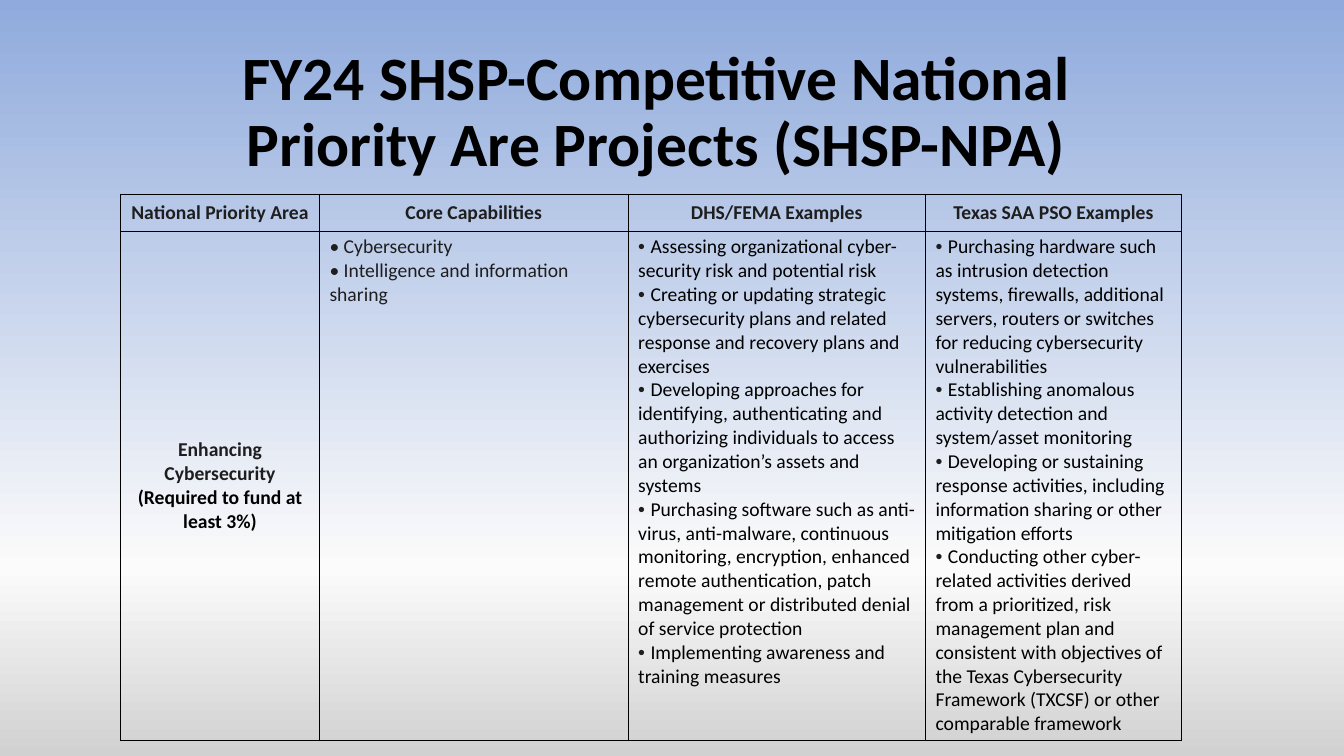
from lxml import etree
from pptx import Presentation
from pptx.dml.color import RGBColor
from pptx.enum.text import MSO_ANCHOR, MSO_AUTO_SIZE, PP_ALIGN
from pptx.oxml.ns import qn
from pptx.util import Pt

LEFT, CENTER = PP_ALIGN.LEFT, PP_ALIGN.CENTER
TOP, MIDDLE = MSO_ANCHOR.TOP, MSO_ANCHOR.MIDDLE
NO_AUTOFIT = MSO_AUTO_SIZE.NONE
TITLE_ONLY = 5

BLACK = "000000"
CHARCOAL = "1E1E1E"
BACKGROUND_STOPS = [(0, "8FAADC"), (75, "FBFBFB"), (100, "D1D1D1")]

HEADERS = ["National Priority Area", "Core Capabilities",
           "DHS/FEMA Examples", "Texas SAA PSO Examples"]
CORE_CAPABILITIES = ["Cybersecurity", "Intelligence and information sharing"]
FEMA_EXAMPLES = [
    "Assessing organizational cyber-security risk and potential risk",
    "Creating or updating strategic cybersecurity plans and related response "
    "and recovery plans and exercises",
    "Developing approaches for identifying, authenticating and authorizing "
    "individuals to access an organization’s assets and systems",
    "Purchasing software such as anti-virus, anti-malware, continuous monitoring, "
    "encryption, enhanced remote authentication, patch management or distributed "
    "denial of service protection",
    "Implementing awareness and training measures",
]
TEXAS_EXAMPLES = [
    "Purchasing hardware such as intrusion detection systems, firewalls, additional "
    "servers, routers or switches for reducing cybersecurity vulnerabilities",
    "Establishing anomalous activity detection and system/asset monitoring",
    "Developing or sustaining response activities, including information sharing "
    "or other mitigation efforts",
    "Conducting other cyber-related activities derived from a prioritized, risk "
    "management plan and consistent with objectives of the Texas Cybersecurity "
    "Framework (TXCSF) or other comparable framework",
]


def color(hex_string):
    return RGBColor.from_string(hex_string)


def add_run(paragraph, text, size=14, font="Calibri", fill=BLACK, bold=False):
    run = paragraph.add_run()
    run.text = text
    run.font.size = Pt(size)
    run.font.name = font
    run.font.bold = bold
    run.font.color.rgb = color(fill)


class SlideBuilder:
    def __init__(self, slide):
        self.slide = slide
        self.border_width = Pt(0.5)
        self.side_margin = Pt(7.2)
        self.row_margin = Pt(3)

    def background(self, stops):
        """Fill the background with a gradient running from top to bottom."""
        fill = self.slide.background.fill
        fill.gradient()
        fill.gradient_angle = 270
        stop_list = next(self.slide.element.iter(qn("a:gsLst")))
        for stop in list(stop_list):
            stop_list.remove(stop)
        for percent, hex_string in stops:
            stop = etree.SubElement(stop_list, qn("a:gs"), pos=str(percent * 1000))
            etree.SubElement(stop, qn("a:srgbClr"), val=hex_string)

    def title(self, text, left, top, width, height):
        title = self.slide.shapes.title
        title.left, title.top = Pt(left), Pt(top)
        title.width, title.height = Pt(width), Pt(height)
        frame = title.text_frame
        frame.word_wrap = True
        frame.auto_size = NO_AUTOFIT
        frame.vertical_anchor = MIDDLE
        paragraph = frame.paragraphs[0]
        paragraph.alignment = CENTER
        paragraph.line_spacing = 0.9
        add_run(paragraph, text, size=44, bold=True)

    def table(self, left, top, column_widths, row_heights):
        table = self.slide.shapes.add_table(
            len(row_heights), len(column_widths), Pt(left), Pt(top),
            Pt(sum(column_widths)), Pt(sum(row_heights))).table
        table.horz_banding = False
        for column, width in zip(table.columns, column_widths):
            column.width = Pt(width)
        for row, height in zip(table.rows, row_heights):
            row.height = Pt(height)
        for cell in table.iter_cells():
            cell.margin_left = cell.margin_right = self.side_margin
            cell.margin_top = cell.margin_bottom = self.row_margin
            self.borders(cell)
            cell.fill.background()
        return table

    def borders(self, cell):
        properties = cell._tc.get_or_add_tcPr()
        for side in ("a:lnL", "a:lnR", "a:lnT", "a:lnB"):
            line = etree.SubElement(properties, qn(side), w=str(self.border_width))
            solid = etree.SubElement(line, qn("a:solidFill"))
            etree.SubElement(solid, qn("a:srgbClr"), val=BLACK)

    def heading(self, cell, text, note=""):
        """Write a centred bold label, with an optional black note after it."""
        cell.vertical_anchor = MIDDLE
        paragraph = cell.text_frame.paragraphs[0]
        paragraph.alignment = CENTER
        add_run(paragraph, text, fill=CHARCOAL, bold=True)
        if note:
            add_run(paragraph, " " + note, bold=True)

    def bullets(self, cell, items, fill=BLACK, bullet_font="Arial"):
        cell.vertical_anchor = TOP
        frame = cell.text_frame
        for index, item in enumerate(items):
            paragraph = frame.add_paragraph() if index else frame.paragraphs[0]
            paragraph.alignment = LEFT
            add_run(paragraph, "• ", font=bullet_font, fill=CHARCOAL)
            add_run(paragraph, item, fill=fill)


def main():
    presentation = Presentation()
    presentation.slide_width, presentation.slide_height = Pt(960), Pt(540)
    slide = presentation.slides.add_slide(presentation.slide_layouts[TITLE_ONLY])

    builder = SlideBuilder(slide)
    builder.background(BACKGROUND_STOPS)
    builder.title("FY24 SHSP-Competitive National Priority Are Projects (SHSP-NPA)",
                  126, 28.8, 686, 104.4)
    table = builder.table(86.2, 139, [142, 220.5, 212.4, 183], [26, 349])
    for column, header in enumerate(HEADERS):
        builder.heading(table.cell(0, column), header)
    builder.heading(table.cell(1, 0), "Enhancing Cybersecurity",
                    note="(Required to fund at least 3%)")
    builder.bullets(table.cell(1, 1), CORE_CAPABILITIES,
                    fill=CHARCOAL, bullet_font="Calibri")
    builder.bullets(table.cell(1, 2), FEMA_EXAMPLES)
    builder.bullets(table.cell(1, 3), TEXAS_EXAMPLES)

    presentation.save("out.pptx")


if __name__ == "__main__":
    main()
